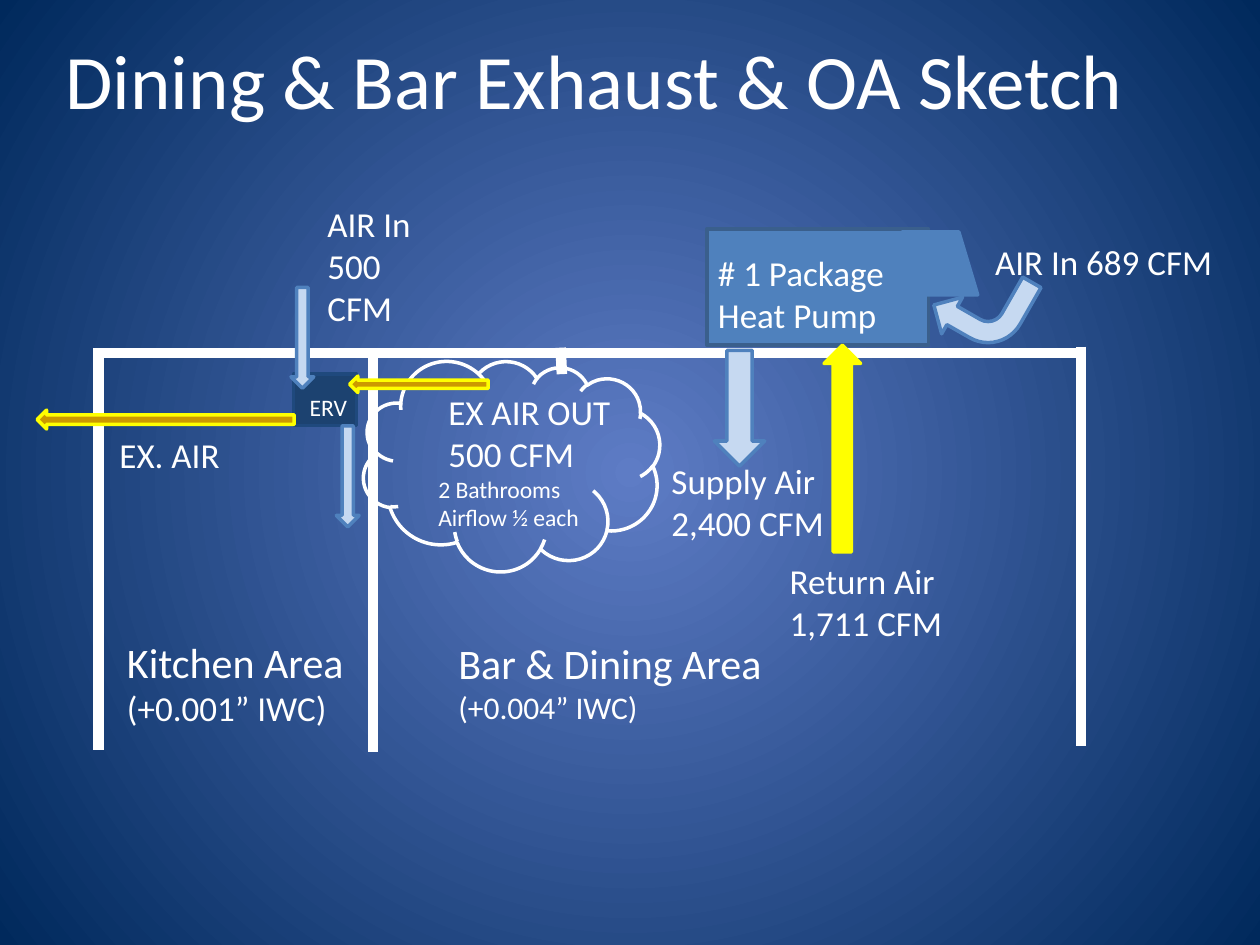
"""Build the dining and bar exhaust and outdoor air sketch slide."""
from lxml.etree import SubElement
from pptx import Presentation
from pptx.dml.color import RGBColor
from pptx.enum.shapes import MSO_CONNECTOR as Connector, MSO_SHAPE as Shape
from pptx.enum.text import MSO_ANCHOR as Anchor, MSO_AUTO_SIZE as AutoSize, PP_ALIGN as Align
from pptx.oxml import parse_xml
from pptx.oxml.ns import nsdecls, qn
from pptx.util import Pt

WHITE, YELLOW, GOLD = "FFFFFF", "FFFF00", "CC9900"
BLUE, PALE = "4F81BD", "C6D9F1"
CENTER, EDGE = "5E7CC5", "00295C"

WALLS = [
    (53.3, 201.6, 617.8, 201.6),
    (56.2, 200.2, 56.2, 428.4),
    (213.1, 202.3, 213.1, 429.8),
    (320.4, 198.7, 321.1, 213.8),
    (617.8, 198, 617.8, 426.2),
]

EQUIPMENT = [
    (Shape.RECTANGLE, (167.8, 213.8, 36, 29.5), 0, "1C4270", "1F497D"),
    (Shape.CLOUD, (207.4, 204.5, 169.2, 122.4), 13, None, WHITE),
    (Shape.UP_ARROW, (234.7, 180, 9.4, 79.2), 270, GOLD, YELLOW),
    (Shape.UP_ARROW, (166.3, 164.2, 13, 57.6), 180, PALE, BLUE),
    (Shape.UP_ARROW, (89.3, 166.3, 10.8, 146.9), 270, GOLD, YELLOW),
    (Shape.UP_ARROW, (192.2, 243.4, 13, 57.6), 180, PALE, BLUE),
    (Shape.RECTANGLE, (403.9, 131, 126.7, 66.2), 0, BLUE, "3A5F8C"),
    (Shape.FLOWCHART_MANUAL_OPERATION, (504.7, 132.5, 54, 36), 180, BLUE, BLUE),
    (Shape.BENT_ARROW, (537.1, 149, 48.2, 51.1), 209.8, PALE, BLUE),
    (Shape.UP_ARROW, (470.9, 197.3, 20.9, 118.1), 0, YELLOW, YELLOW),
    (Shape.UP_ARROW, (408.2, 200.2, 28.8, 66.2), 180, PALE, BLUE),
]

LABELS = [
    ((169.9, 221, 41, 23.8), True, [("ERV", 13.5)]),
    ((243.4, 267.8, 96.5, 40.3), False, [("2 Bathrooms", 13.5), ("Airflow ½ each", 13.5)]),
    ((249.1, 219.6, 128.2, 55.4), True, [("EX AIR OUT", 20), ("500 CFM", 20)]),
    ((61.2, 244.1, 77, 31.7), False, [("EX. AIR", 20)]),
    ((180, 112.3, 64.1, 79.9), True, [("AIR In", 20), ("500 CFM", 20)]),
    ((561.6, 133.9, 139.7, 31.7), False, [("AIR In 689 CFM", 20)]),
    ((376.6, 259.2, 102.2, 55.4), False, [("Supply Air", 20), ("2,400 CFM", 20)]),
    ((403.2, 140.4, 126.7, 55.4), True, [("# 1 Package Heat Pump", 20)]),
    ((444.2, 316.1, 102.2, 55.4), False, [("Return Air", 20), ("1,711 CFM", 20)]),
    ((254.9, 360.7, 189.4, 58.3), False, [("Bar & Dining Area", 24), ("(+0.004” IWC)", 18)]),
    ((65.5, 360, 139.7, 90), False, [("Kitchen Area", 24), ("(+0.001” IWC)", 20)]),
]

TITLE = ((15.8, 0, 648, 90), True, [("Dining & Bar Exhaust & OA Sketch", 44)])


def color(value):
    return RGBColor.from_string(value)


def points(values):
    return [Pt(value) for value in values]


def paint_background(slide):
    background = parse_xml(
        f'<p:bg {nsdecls("p", "a")}><p:bgPr><a:gradFill rotWithShape="1"><a:gsLst>'
        f'<a:gs pos="0"><a:srgbClr val="{CENTER}"/></a:gs>'
        f'<a:gs pos="100000"><a:srgbClr val="{EDGE}"/></a:gs></a:gsLst>'
        '<a:path path="circle"><a:fillToRect l="50000" t="50000" r="50000" b="50000"/></a:path>'
        '</a:gradFill><a:effectLst/></p:bgPr></p:bg>'
    )
    slide.element.cSld.insert(0, background)


def add_wall(slide, ends):
    wall = slide.shapes.add_connector(Connector.STRAIGHT, *points(ends))
    wall.line.color.rgb = color(WHITE)
    wall.line.width = Pt(6)
    SubElement(wall.element.spPr, qn("a:effectLst"))


def add_equipment(slide, kind, box, rotation, fill, line):
    shape = slide.shapes.add_shape(kind, *points(box))
    shape.rotation = rotation
    shape.shadow.inherit = False
    if fill:
        shape.fill.solid()
        shape.fill.fore_color.rgb = color(fill)
    else:
        shape.fill.background()
    shape.line.color.rgb = color(line)
    shape.line.width = Pt(2)


def add_label(slide, box, wrap, lines):
    label = slide.shapes.add_textbox(*points(box))
    frame = label.text_frame
    frame.word_wrap = wrap
    frame.auto_size = AutoSize.SHAPE_TO_FIT_TEXT
    frame.text = "\n".join(text for text, size in lines)
    for paragraph, (text, size) in zip(frame.paragraphs, lines):
        paragraph.font.name = "Calibri"
        paragraph.font.size = Pt(size)
        paragraph.font.color.rgb = color(WHITE)
    return frame


def main():
    presentation = Presentation()
    presentation.slide_width, presentation.slide_height = Pt(720), Pt(540)
    slide = presentation.slides.add_slide(presentation.slide_layouts[6])
    paint_background(slide)
    for ends in WALLS:
        add_wall(slide, ends)
    for item in EQUIPMENT:
        add_equipment(slide, *item)
    for label in LABELS:
        add_label(slide, *label)
    title = add_label(slide, *TITLE)
    title.auto_size = AutoSize.NONE
    title.vertical_anchor = Anchor.MIDDLE
    title.paragraphs[0].alignment = Align.CENTER
    presentation.save("out.pptx")


if __name__ == "__main__":
    main()
